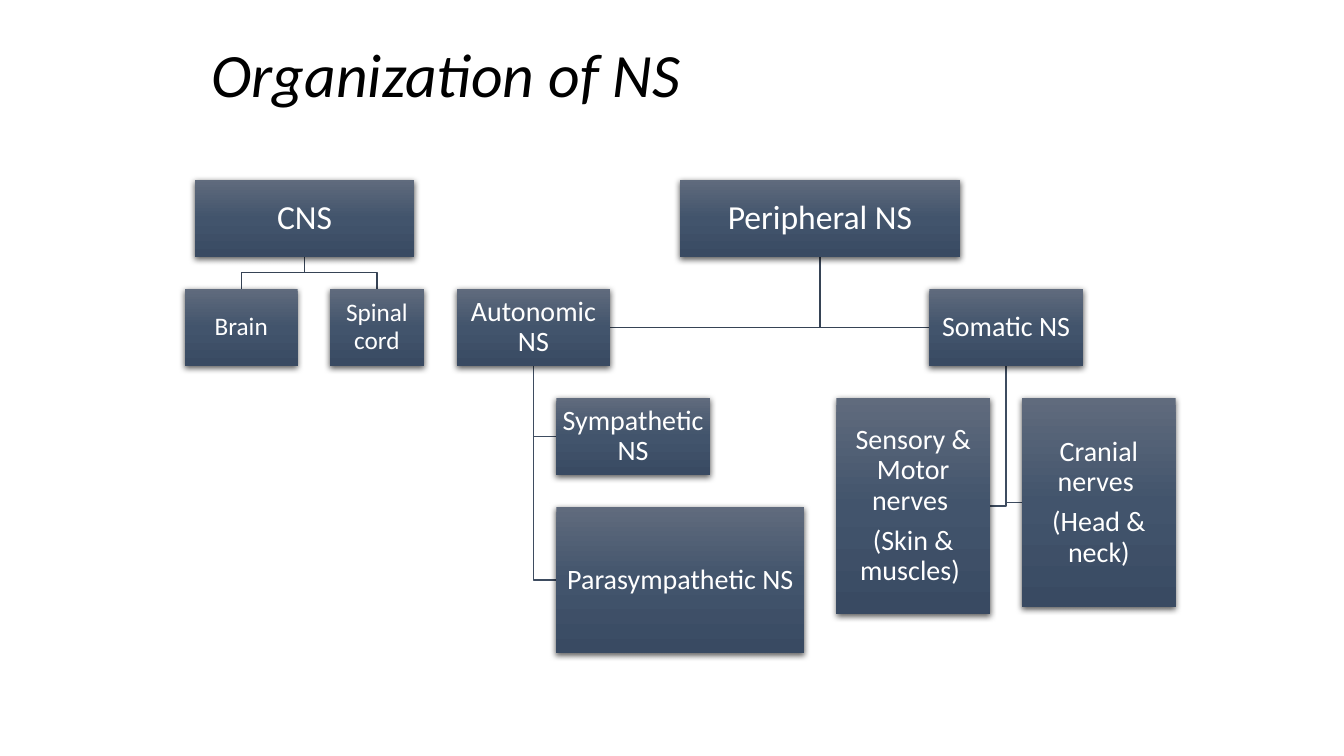
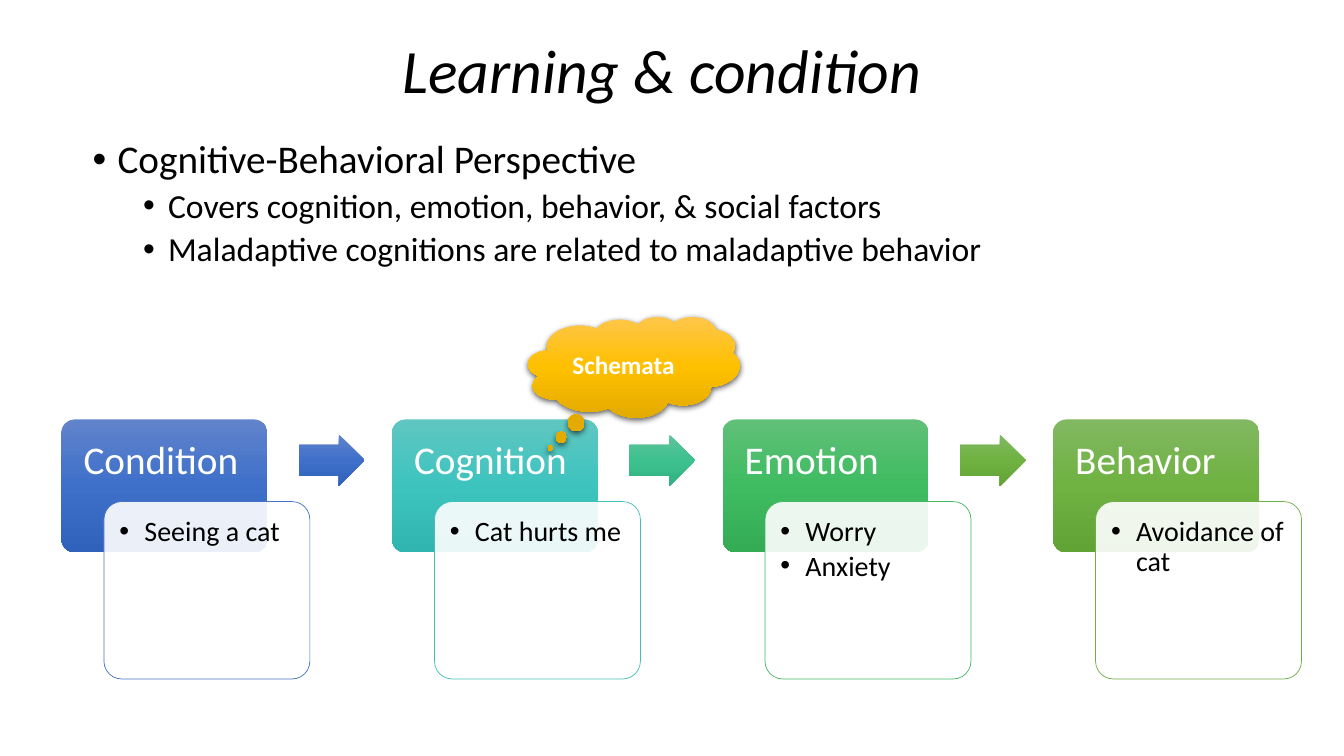
from copy import deepcopy

from lxml import etree
from pptx import Presentation
from pptx.dml.color import RGBColor
from pptx.enum.shapes import MSO_SHAPE
from pptx.enum.text import MSO_ANCHOR, MSO_AUTO_SIZE, PP_ALIGN
from pptx.oxml.ns import qn
from pptx.util import Cm, Pt

RECT, ROUND = MSO_SHAPE.RECTANGLE, MSO_SHAPE.ROUNDED_RECTANGLE
ARROW, CLOUD = MSO_SHAPE.RIGHT_ARROW, MSO_SHAPE.CLOUD_CALLOUT
LEFT, CENTER = PP_ALIGN.LEFT, PP_ALIGN.CENTER
TOP, MIDDLE = MSO_ANCHOR.TOP, MSO_ANCHOR.MIDDLE
NO_FIT = MSO_AUTO_SIZE.NONE

FONT = "Calibri"
BLACK = RGBColor(0, 0, 0)
WHITE = RGBColor(255, 255, 255)
DARK = RGBColor(0x36, 0x43, 0x55)
SLATE = RGBColor(0x3E, 0x4C, 0x60)


def ramp(*codes):
    return [RGBColor.from_string(code) for code in codes]


NAVY = ramp("606B7D", "42546C", "394A62")
BLUE = ramp("6183CB", "3E70CA", "3062BB")
TEAL = ramp("60C6C1", "3DC4BF", "30B5B0")
MINT = ramp("60C39A", "3DC18F", "31B080")
GREEN = ramp("60C077", "3FBC62", "33AC55")
LEAF = ramp("81B861", "6FB242", "62A336")
GOLD = ramp("FFC64B", "FFC000", "E3AB00")
RIM_BLUE, RIM_TEAL, RIM_GREEN, RIM_LEAF = ramp(
    "4472C4", "43BEB9", "45B664", "70AD47")

# Organization chart: key -> lines, size, left, row, width, height (cm)
ROW_TOP, ROW_STEP, ROW_H = 4.53, 2.75, 1.94
NODES = {
    "cns": (["CNS"], 24, 4.92, 0, 5.51, ROW_H),
    "brain": (["Brain"], 18, 4.66, 1, 2.84, ROW_H),
    "cord": (["Spinal cord"], 18, 8.31, 1, 2.38, ROW_H),
    "outer": (["Peripheral NS"], 24, 17.13, 0, 7.07, ROW_H),
    "auto": (["Autonomic NS"], 20, 11.51, 1, 3.87, ROW_H),
    "symp": (["Sympathetic NS"], 20, 14.02, 2, 3.87, ROW_H),
    "para": (["Parasympathetic NS"], 20, 14.02, 3, 6.25, 3.68),
    "soma": (["Somatic NS"], 20, 23.42, 1, 3.87, ROW_H),
    "skin": (["Sensory & Motor nerves ", "(Skin & muscles) "],
             20, 21.08, 2, 3.87, 5.44),
    "head": (["Cranial nerves ", "(Head & neck)"],
             20, 25.76, 2, 3.87, 5.28),
}
# Links: parent, child, side of the child, colour
ABOVE, WEST, BELOW, EAST = range(4)
LINKS = [
    ("soma", "head", WEST, SLATE), ("soma", "skin", EAST, SLATE),
    ("outer", "soma", WEST, DARK), ("auto", "para", WEST, SLATE),
    ("auto", "symp", WEST, SLATE), ("outer", "auto", EAST, DARK),
    ("cns", "cord", ABOVE, DARK), ("cns", "brain", ABOVE, DARK),
]

# Body list: text, level; and the size, space before, indent of each level
HANG = 0.63
POINTS = [
    ("Cognitive-Behavioral Perspective", 0),
    ("Covers cognition, emotion, behavior, & social factors", 1),
    ("Maladaptive cognitions are related to maladaptive behavior", 1),
]
LEVELS = [(28, 10, HANG), (24, 5, 1.9)]

# Process: heading, details, card ramp, detail rim, ramp of the next arrow
STEPS = [
    ("Condition", ["Seeing a cat"], BLUE, RIM_BLUE, BLUE),
    ("Cognition", ["Cat hurts me"], TEAL, RIM_TEAL, MINT),
    ("Emotion", ["Worry", "Anxiety"], GREEN, RIM_GREEN, LEAF),
    ("Behavior", ["Avoidance of cat"], LEAF, RIM_LEAF, None),
]
STEP_LEFT, STEP_TOP, STEP_GAP, STEP_W = 1.55, 10.57, 8.33, 5.19


def write(frame, text, size=20, color=BLACK, bold=False, italic=False,
          align=LEFT, lead=0.9, before=0, bullet=None, level=0):
    """Add one paragraph; bullet is the left indent in cm."""
    para = frame.paragraphs[0]
    if para.text:
        para = frame.add_paragraph()
    para.level, para.alignment, para.line_spacing = level, align, lead
    para.space_before, para.space_after = Pt(before), Pt(0)
    run = para.add_run()
    run.text = text
    font = run.font
    font.name, font.size, font.color.rgb = FONT, Pt(size), color
    font.bold, font.italic = bold, italic
    if bullet:
        props = para._p.get_or_add_pPr()
        props.set("marL", str(Cm(bullet)))
        props.set("indent", str(-Cm(HANG)))
        etree.SubElement(props, qn("a:buFont")).set("typeface", "Arial")
        etree.SubElement(props, qn("a:buChar")).set("char", "•")


def place(shape, left, top, width, height):
    shape.left, shape.top = Cm(left), Cm(top)
    shape.width, shape.height = Cm(width), Cm(height)


def start(deck, layout, title, area, align):
    """Add a slide with its formatted title."""
    slide = deck.slides.add_slide(deck.slide_layouts[layout])
    head = slide.shapes.title
    place(head, *area)
    head.text_frame.vertical_anchor = MIDDLE
    head.text_frame.auto_size = NO_FIT
    write(head.text_frame, title, size=44, italic=True, align=align)
    return slide


def draw(slide, kind, area, colors=None, adjust=(), shadow=False,
         pads=None, anchor=MIDDLE):
    """Add a shape without outline, filled with a vertical gradient."""
    shape = slide.shapes.add_shape(kind, *map(Cm, area))
    for index, value in enumerate(adjust):
        shape.adjustments[index] = value
    shape.line.fill.background()
    if colors:
        shape.fill.gradient()
        shape.fill.gradient_angle = 270
        stops = next(shape._element.spPr.iter(qn("a:gsLst")))
        stops.append(deepcopy(stops[0]))
        for index, stop in enumerate(shape.fill.gradient_stops):
            stop.color.rgb, stop.position = colors[index], index / 2
    shape.shadow.inherit = False
    if shadow:
        effects = shape._element.spPr.find(qn("a:effectLst"))
        outer = etree.SubElement(
            effects, qn("a:outerShdw"), blurRad=str(Pt(4.5)),
            dist=str(Pt(1.5)), dir="5400000", algn="ctr", rotWithShape="0")
        tint = etree.SubElement(outer, qn("a:srgbClr"), val="000000")
        etree.SubElement(tint, qn("a:alpha"), val="63000")
    frame = shape.text_frame
    frame.word_wrap, frame.vertical_anchor = True, anchor
    if pads:
        (frame.margin_left, frame.margin_top,
         frame.margin_right, frame.margin_bottom) = map(Cm, pads)
    return shape


def area_of(key):
    left, row, width, height = NODES[key][2:]
    return left, ROW_TOP + row * ROW_STEP, width, height


def spot(key, side):
    """Middle of one side of a box."""
    left, top, width, height = area_of(key)
    across, down = ((1, 0), (0, 1), (1, 2), (2, 1))[side]
    return Cm(left + width * across / 2), Cm(top + height * down / 2)


def link(slide, parent, child, side, color):
    """Draw a bent line from below the parent to a side of the child."""
    stem, low = spot(parent, BELOW)
    end, level = spot(child, side)
    if side == ABOVE:
        bar = (low + level) // 2
        route = [(stem, bar), (end, bar), (end, level)]
    else:
        route = [(stem, level), (end, level)]
    pen = slide.shapes.build_freeform(stem, low)
    pen.add_line_segments(route, close=False)
    line = pen.convert_to_shape()
    line.fill.background()
    line.line.color.rgb, line.line.width = color, Pt(1)
    line.shadow.inherit = False


def chart(deck):
    slide = start(deck, 5, "Organization of NS",
                  (5.08, 0.97, 21.89, 1.96), LEFT)
    for branch in LINKS:
        link(slide, *branch)
    for key, (lines, size, *_) in NODES.items():
        box = draw(slide, RECT, area_of(key), NAVY, shadow=True,
                   pads=[0.03] * 4)
        for index, text in enumerate(lines):
            write(box.text_frame, text, size=size, color=WHITE,
                  align=CENTER, before=7 if index else 0)


def process(deck):
    slide = start(deck, 1, "Learning & condition",
                  (2.08, 0, 29.21, 3.7), CENTER)
    # Bulleted list
    body = slide.placeholders[1]
    place(body, 2.08, 3.4, 29.21, 3.81)
    body.text_frame.auto_size = NO_FIT
    for text, level in POINTS:
        size, before, indent = LEVELS[level]
        write(body.text_frame, text, size=size, before=before,
              bullet=indent, level=level)

    # Steps with details and arrows
    for index, (name, notes, colors, rim, after) in enumerate(STEPS):
        left = STEP_LEFT + index * STEP_GAP
        card = draw(slide, ROUND, (left, STEP_TOP, STEP_W, 3.35), colors,
                    [0.1], pads=(0.46, 0.44, 0.3, 0.3), anchor=TOP)
        write(card.text_frame, name, size=28, color=WHITE)
        note = draw(slide, ROUND, (left + 1.07, 12.64, STEP_W, 4.47),
                    adjust=[0.1], pads=(0.26, 0.27, 0.2, 0.28), anchor=TOP)
        note.fill.solid()
        note.fill.fore_color.rgb = WHITE
        tint = note._element.spPr.find(qn("a:solidFill"))[0]
        etree.SubElement(tint, qn("a:alpha"), val="90000")
        note.line.color.rgb, note.line.width = rim, Pt(0.5)
        for row, text in enumerate(notes):
            write(note.text_frame, text, before=3 if row else 0, bullet=HANG)
        if after:
            draw(slide, ARROW, (left + 5.98, 10.95, 1.66, 1.3), after,
                 [0.6, 0.5])

    # Thought cloud
    cloud = draw(slide, CLOUD, (13.31, 7.98, 5.33, 2.54), GOLD,
                 [-0.395, 0.802], shadow=True)
    write(cloud.text_frame, "Schemata ", size=18, color=WHITE, bold=True,
          align=CENTER, lead=1)


def main():
    deck = Presentation()
    deck.slide_width, deck.slide_height = Cm(33.87), Cm(19.05)
    chart(deck)
    process(deck)
    deck.save("out.pptx")


if __name__ == "__main__":
    main()
